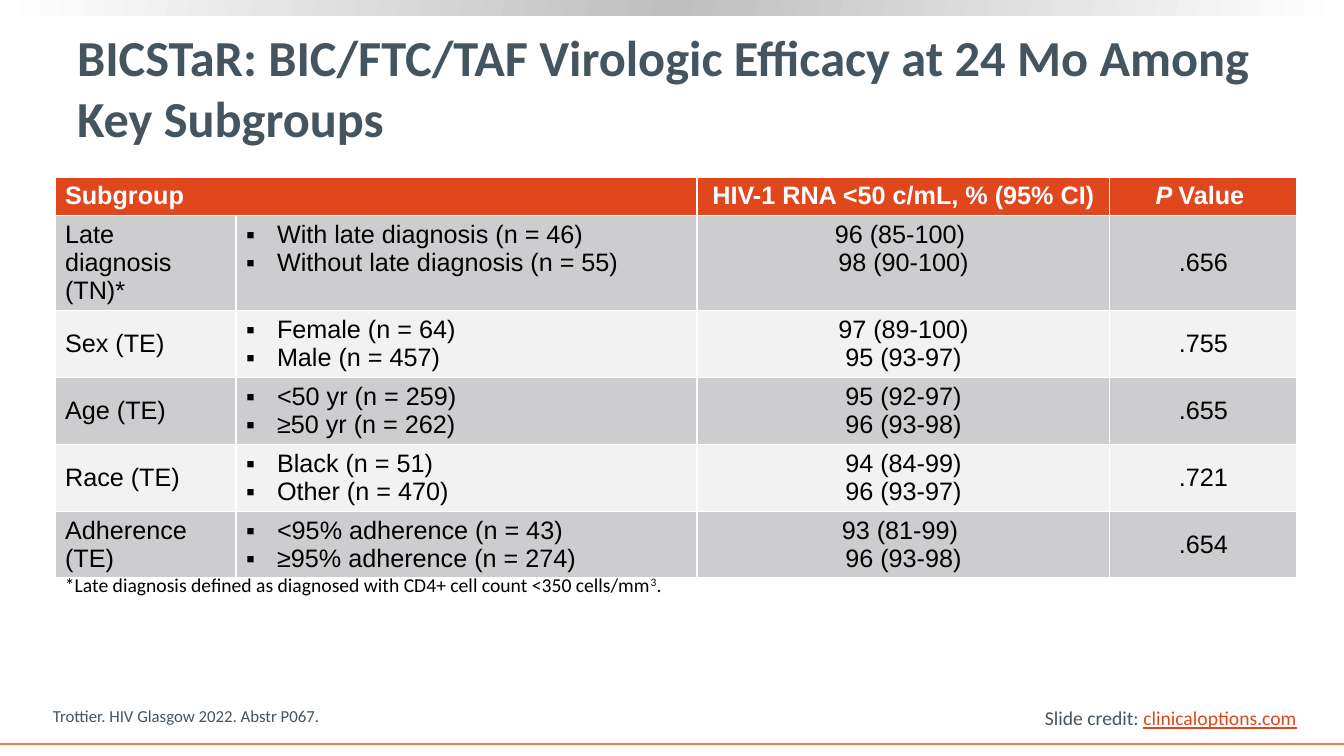
from copy import deepcopy

from lxml import etree
from pptx import Presentation
from pptx.dml.color import RGBColor
from pptx.enum.shapes import MSO_CONNECTOR, MSO_SHAPE
from pptx.enum.text import MSO_ANCHOR, PP_ALIGN
from pptx.oxml.ns import qn
from pptx.util import Emu, Pt

EMU_PER_PX = 914400 / 100.8
SLATE, ORANGE, BLACK, WHITE = "455560", "E1471D", "000000", "FFFFFF"
BANDS = ["CDCDCF", "F2F2F2"]
COLUMNS = [181, 461, 413, 187]
ROWS = [38, 95, 67, 67, 67, 66]
SUBGROUPS = [
    ("Late diagnosis (TN)*",
     ["With late diagnosis (n = 46)", "Without late diagnosis (n = 55)"],
     ["96 (85-100) ", "98 (90-100)"], ".656"),
    ("Sex (TE)", ["Female (n = 64)", "Male (n = 457)"],
     ["97 (89-100)", "95 (93-97)"], ".755"),
    ("Age (TE)", ["<50 yr (n = 259)", "≥50 yr (n = 262)"],
     ["95 (92-97)", "96 (93-98)"], ".655"),
    ("Race (TE)", ["Black (n = 51)", "Other (n = 470)"],
     ["94 (84-99)", "96 (93-97)"], ".721"),
    ("Adherence (TE)", ["<95% adherence (n = 43)", "≥95% adherence (n = 274)"],
     ["93 (81-99) ", "96 (93-98)"], ".654"),
]


def px(n):
    return Emu(round(n * EMU_PER_PX))


def rgb(code):
    return RGBColor.from_string(code)


def add_run(p, text, color, size, name="Calibri", **formats):
    r = p.add_run()
    r.text = text
    r.font.color.rgb = rgb(color)
    for key, value in {"size": Pt(size), "name": name, **formats}.items():
        setattr(r.font, key, value)
    return r


def add_text(s, left, top, width, height, wrap=True, anchor=MSO_ANCHOR.TOP):
    """Add an empty text box and return its first paragraph."""
    tf = s.shapes.add_textbox(px(left), px(top), px(width), px(height)).text_frame
    tf.word_wrap = wrap
    tf.vertical_anchor = anchor
    return tf.paragraphs[0]


def add_top_band(s):
    sp = s.shapes.add_shape(MSO_SHAPE.RECTANGLE, 0, 0, px(1344), px(16))
    sp.shadow.inherit = False
    sp.line.fill.background()
    sp.fill.gradient()
    sp.fill.gradient_angle = 170
    first = sp.fill._fill._gradFill.find(qn("a:gsLst"))[0]
    first.addnext(deepcopy(first))
    for stop, position, color in zip(sp.fill.gradient_stops, (0, 0.5, 1),
                                     (WHITE, "BFBFBF", WHITE)):
        stop.position = position
        stop.color.rgb = rgb(color)


def add_bottom_rule(s):
    line = s.shapes.add_connector(MSO_CONNECTOR.STRAIGHT, 0, px(744), px(1344), px(744))
    line.line.color.rgb = rgb("F47D55")
    line.line.width = Pt(1.5)
    etree.SubElement(line._element.spPr, qn("a:effectLst"))


def add_title(s, text):
    title = s.shapes.title
    places = {"left": 67, "top": 26, "width": 1199, "height": 122}
    for key, value in places.items():
        setattr(title, key, px(value))
    tf = title.text_frame
    tf.word_wrap = True
    tf.vertical_anchor = MSO_ANCHOR.MIDDLE
    tf.paragraphs[0].alignment = PP_ALIGN.LEFT
    add_run(tf.paragraphs[0], text, SLATE, 36, bold=True)


def add_bullet(p):
    pPr = p._p.get_or_add_pPr()
    pPr.set("marL", str(px(31)))
    pPr.set("indent", str(-px(31)))
    etree.SubElement(pPr, qn("a:buFont"), typeface="Arial")
    etree.SubElement(pPr, qn("a:buChar"), char="▪")


def fill_cell(cell, fill, lines, color=BLACK, align=PP_ALIGN.LEFT,
              anchor=MSO_ANCHOR.MIDDLE, bullets=False, bold=False):
    """Write one paragraph per line; a line is a list of (text, italic) runs."""
    cell.fill.solid()
    cell.fill.fore_color.rgb = rgb(fill)
    cell.vertical_anchor = anchor
    tf = cell.text_frame
    for i, runs in enumerate(lines):
        p = tf.add_paragraph() if i else tf.paragraphs[0]
        p.alignment = align
        if bullets:
            add_bullet(p)
        for text, italic in runs:
            add_run(p, text, color, 18, "Arial", bold=bold, italic=italic)


def plain(*lines):
    return [[(line, False)] for line in lines]


def add_subgroup_table(s):
    table = s.shapes.add_table(len(ROWS), len(COLUMNS), px(55), px(177),
                               px(sum(COLUMNS)), px(sum(ROWS))).table
    for column, width in zip(table.columns, COLUMNS):
        column.width = px(width)
    for row, height in zip(table.rows, ROWS):
        row.height = px(height)

    table.cell(0, 0).merge(table.cell(0, 1))
    headers = [(0, plain("Subgroup"), PP_ALIGN.LEFT),
               (2, plain("HIV-1 RNA <50 c/mL, % (95% CI)"), PP_ALIGN.CENTER),
               (3, [[("P ", True), ("Value ", False)]], PP_ALIGN.CENTER)]
    for col, lines, align in headers:
        fill_cell(table.cell(0, col), ORANGE, lines, WHITE, align, bold=True)

    for row, (name, groups, rates, p_value) in enumerate(SUBGROUPS, 1):
        band = BANDS[(row - 1) % 2]
        fill_cell(table.cell(row, 0), band, plain(name))
        fill_cell(table.cell(row, 1), band, plain(*groups),
                  anchor=MSO_ANCHOR.TOP, bullets=True)
        fill_cell(table.cell(row, 2), band, plain(*rates),
                  align=PP_ALIGN.CENTER, anchor=MSO_ANCHOR.TOP)
        fill_cell(table.cell(row, 3), band, plain(p_value), align=PP_ALIGN.CENTER)


def add_notes_and_credit(s):
    p = add_text(s, 43, 701, 866, 30, anchor=MSO_ANCHOR.BOTTOM)
    add_run(p, "Trottier. HIV Glasgow 2022. Abstr P067.", SLATE, 12)

    p = add_text(s, 55, 568, 633, 34, wrap=False)
    add_run(p, "*Late diagnosis defined as diagnosed with CD4+ cell count <350 cells/mm",
            BLACK, 14)
    cubed = add_run(p, "3", BLACK, 14)
    cubed.font._element.set("baseline", "30000")
    add_run(p, ".", BLACK, 14)

    p = add_text(s, 1035, 701, 274, 34, wrap=False)
    add_run(p, "Slide credit: ", SLATE, 14)
    add_run(p, "clinicaloptions.com", ORANGE, 14, underline=True)


def main():
    prs = Presentation()
    prs.slide_width, prs.slide_height = px(1344), px(756)
    s = prs.slides.add_slide(prs.slide_layouts[5])
    add_top_band(s)
    add_bottom_rule(s)
    add_title(s, "BICSTaR: BIC/FTC/TAF Virologic Efficacy at 24 Mo Among Key Subgroups")
    add_subgroup_table(s)
    add_notes_and_credit(s)
    prs.save("out.pptx")


if __name__ == "__main__":
    main()
